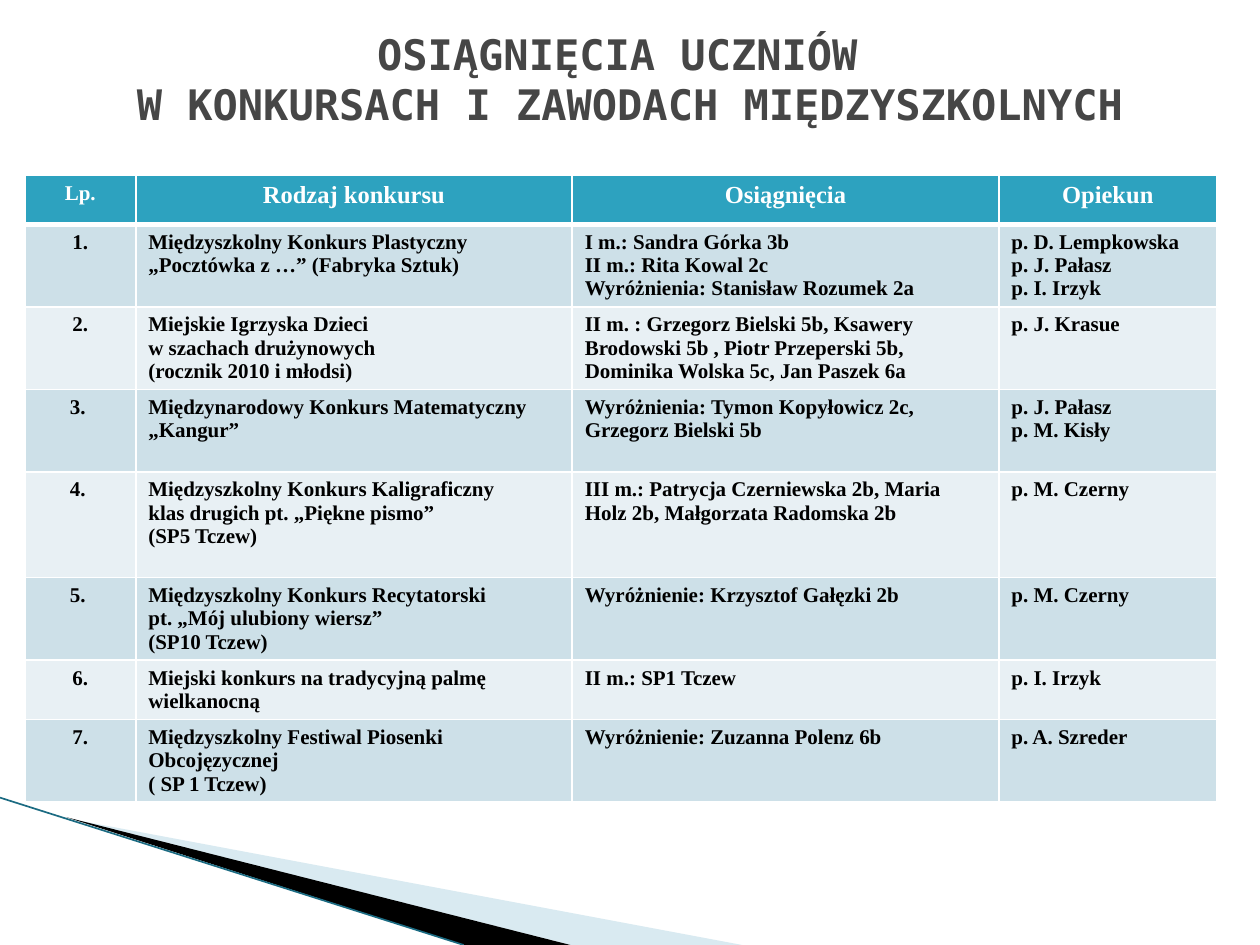
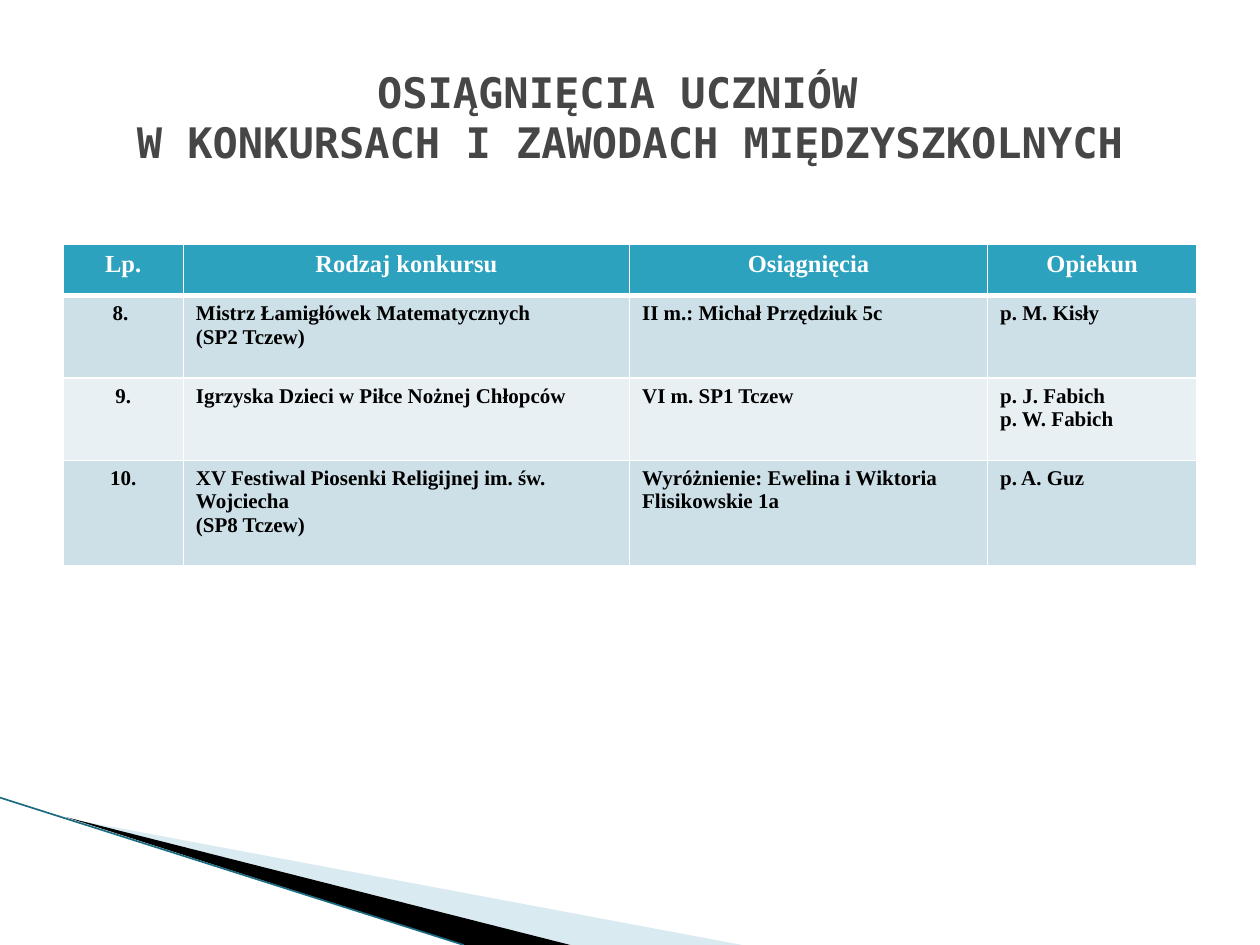
from lxml import etree
from pptx import Presentation
from pptx.dml.color import RGBColor
from pptx.enum.shapes import MSO_CONNECTOR
from pptx.enum.text import MSO_ANCHOR, PP_ALIGN
from pptx.oxml.ns import qn
from pptx.util import Pt

WHITE, BLACK = "FFFFFF", "000000"
TITLE_GREY, HEADER_TEAL = "464646", "2DA2BF"
BANDS = ("CDE0E8", "E8F0F4")
PALE_BLUE, EDGE_TEAL = "A0CBDC", "1B6B82"
TITLE_FONT, TABLE_FONT = "DejaVu Sans Mono", "Times New Roman"
LINE_HEIGHT, CELL_PADDING = 13.3, 7.2

TITLE = "OSIĄGNIĘCIA UCZNIÓW \vW KONKURSACH I ZAWODACH MIĘDZYSZKOLNYCH"
HEADINGS = ("Lp.", "Rodzaj konkursu", "Osiągnięcia", "Opiekun")

# Each row: lines of height, then the four cells
FIRST_CONTESTS = [
    (3, "1.", "Międzyszkolny Konkurs Plastyczny „Pocztówka z …” (Fabryka Sztuk)",
     "I m.: Sandra Górka 3b\nII m.: Rita Kowal 2c\nWyróżnienia: Stanisław Rozumek 2a",
     "p. D. Lempkowska\np. J. Pałasz\np. I. Irzyk"),
    (3, "2.", "Miejskie Igrzyska Dzieci\nw szachach drużynowych\n(rocznik 2010 i młodsi)",
     "II m. : Grzegorz Bielski 5b, Ksawery Brodowski 5b , Piotr Przeperski 5b, "
     "Dominika Wolska 5c, Jan Paszek 6a",
     "p. J. Krasue"),
    (3, "3. ", "Międzynarodowy Konkurs Matematyczny „Kangur”",
     "Wyróżnienia: Tymon Kopyłowicz 2c, Grzegorz Bielski 5b",
     "p. J. Pałasz\np. M. Kisły"),
    (4, "4. ", "Międzyszkolny Konkurs Kaligraficzny\nklas drugich pt. „Piękne pismo”\n(SP5 Tczew)",
     "III m.: Patrycja Czerniewska 2b, Maria Holz 2b, Małgorzata Radomska 2b",
     "p. M. Czerny"),
    (3, "5. ", "Międzyszkolny Konkurs Recytatorski\npt. „Mój ulubiony wiersz”\n(SP10 Tczew)",
     "Wyróżnienie: Krzysztof Gałęzki 2b", "p. M. Czerny"),
    (2, "6.", "Miejski konkurs na tradycyjną palmę wielkanocną",
     "II m.: SP1 Tczew", "p. I. Irzyk"),
    (3, "7.", "Międzyszkolny Festiwal Piosenki Obcojęzycznej\n( SP 1 Tczew)",
     "Wyróżnienie: Zuzanna Polenz 6b", "p. A. Szreder"),
]
LAST_CONTESTS = [
    (3, "8. ", "Mistrz Łamigłówek Matematycznych\n(SP2 Tczew)",
     "II m.: Michał Przędziuk 5c", "p. M. Kisły"),
    (3, "9.", "Igrzyska Dzieci w Piłce Nożnej Chłopców",
     "VI m. SP1 Tczew", "p. J. Fabich\np. W. Fabich"),
    (4, "10.", "XV Festiwal Piosenki Religijnej im. św. Wojciecha\n(SP8 Tczew)",
     "Wyróżnienie: Ewelina i Wiktoria Flisikowskie 1a", "p. A. Guz"),
]


def rgb(value):
    return RGBColor.from_string(value)


def write(frame, text, *, size=12, font=TABLE_FONT, color=BLACK, align=PP_ALIGN.LEFT):
    frame.word_wrap = True
    frame.text = text
    for paragraph in frame.paragraphs:
        paragraph.alignment = align
        for run in paragraph.runs:
            run.font.name = font
            run.font.size = Pt(size)
            run.font.bold = True
            run.font.color.rgb = rgb(color)


def border(cell, **widths):
    """Draw white cell borders, given as widths for L, R, T and B."""
    properties = cell._tc.get_or_add_tcPr()
    for side in "LRTB":
        width = Pt(widths.get(side, 1))
        line = etree.SubElement(properties, qn(f"a:ln{side}"), w=str(int(width)))
        fill = etree.SubElement(line, qn("a:solidFill"))
        etree.SubElement(fill, qn("a:srgbClr"), val=WHITE)


def add_wedge(slide, left, top, points, color, opacity=100):
    corners = [(left + x, top + y) for x, y in points]
    outline = slide.shapes.build_freeform(*corners[0], scale=Pt(1))
    outline.add_line_segments(corners[1:], close=True)
    wedge = outline.convert_to_shape()
    wedge.shadow.inherit = False
    wedge.line.fill.background()
    wedge.fill.solid()
    wedge.fill.fore_color.rgb = rgb(color)
    if opacity < 100:
        tint = wedge.fill._xPr.find(".//" + qn("a:srgbClr"))
        etree.SubElement(tint, qn("a:alpha"), val=str(opacity * 1000))


def add_corner_bands(slide, left, top, height):
    add_wedge(slide, left, top, [(39.6, 12.5), (424.5, height), (326, height)],
              PALE_BLUE, opacity=40)
    add_wedge(slide, left, top, [(38.2, 11.5), (326, height), (265, height)], BLACK)
    edge = slide.shapes.add_connector(MSO_CONNECTOR.STRAIGHT, Pt(left), Pt(top),
                                      Pt(left + 265), Pt(top + height))
    edge.line.color.rgb = rgb(EDGE_TEAL)
    edge.line.width = Pt(0.95)
    etree.SubElement(edge._element.spPr, qn("a:effectLst"))


def add_title(slide, left, top, width, height):
    box = slide.shapes.add_textbox(Pt(left), Pt(top), Pt(width), Pt(height))
    box.text_frame.vertical_anchor = MSO_ANCHOR.MIDDLE
    write(box.text_frame, TITLE, size=24, font=TITLE_FONT, color=TITLE_GREY,
          align=PP_ALIGN.CENTER)


def add_contest_table(slide, left, top, widths, header_height, number_size, contests):
    heights = [header_height]
    heights += [CELL_PADDING + LINE_HEIGHT * lines for lines, *_ in contests]
    table = slide.shapes.add_table(len(heights), len(widths), Pt(left), Pt(top),
                                   Pt(sum(widths)), Pt(sum(heights))).table
    for column, width in zip(table.columns, widths):
        column.width = Pt(width)
    for row, height in zip(table.rows, heights):
        row.height = Pt(height)

    for index, heading in enumerate(HEADINGS):
        cell = table.cell(0, index)
        border(cell, B=3)
        cell.fill.solid()
        cell.fill.fore_color.rgb = rgb(HEADER_TEAL)
        write(cell.text_frame, heading, size=14 if index else number_size,
              color=WHITE, align=PP_ALIGN.CENTER)

    for number, (_, *entries) in enumerate(contests):
        for index, entry in enumerate(entries):
            cell = table.cell(number + 1, index)
            border(cell, T=1 if number else 3)
            cell.fill.solid()
            cell.fill.fore_color.rgb = rgb(BANDS[number % 2])
            write(cell.text_frame, entry,
                  align=PP_ALIGN.LEFT if index else PP_ALIGN.CENTER)


def add_contest_slide(deck, title_top, **table):
    slide = deck.slides.add_slide(deck.slide_layouts[6])
    add_corner_bands(slide, 0, 455.8, 84.2)
    add_contest_table(slide, **table)
    add_title(slide, 36, title_top, 648, 90)


def main():
    deck = Presentation()
    deck.slide_width, deck.slide_height = Pt(720), Pt(540)
    add_contest_slide(deck, 0, left=14.2, top=100.2, widths=(63.4, 249.4, 243.8, 124.6),
                      header_height=28, number_size=12, contests=FIRST_CONTESTS)
    add_contest_slide(deck, 21.6, left=36, top=139.8, widths=(68.8, 255, 204.6, 119.6),
                      header_height=29.2, number_size=14, contests=LAST_CONTESTS)
    deck.save("out.pptx")


if __name__ == "__main__":
    main()
